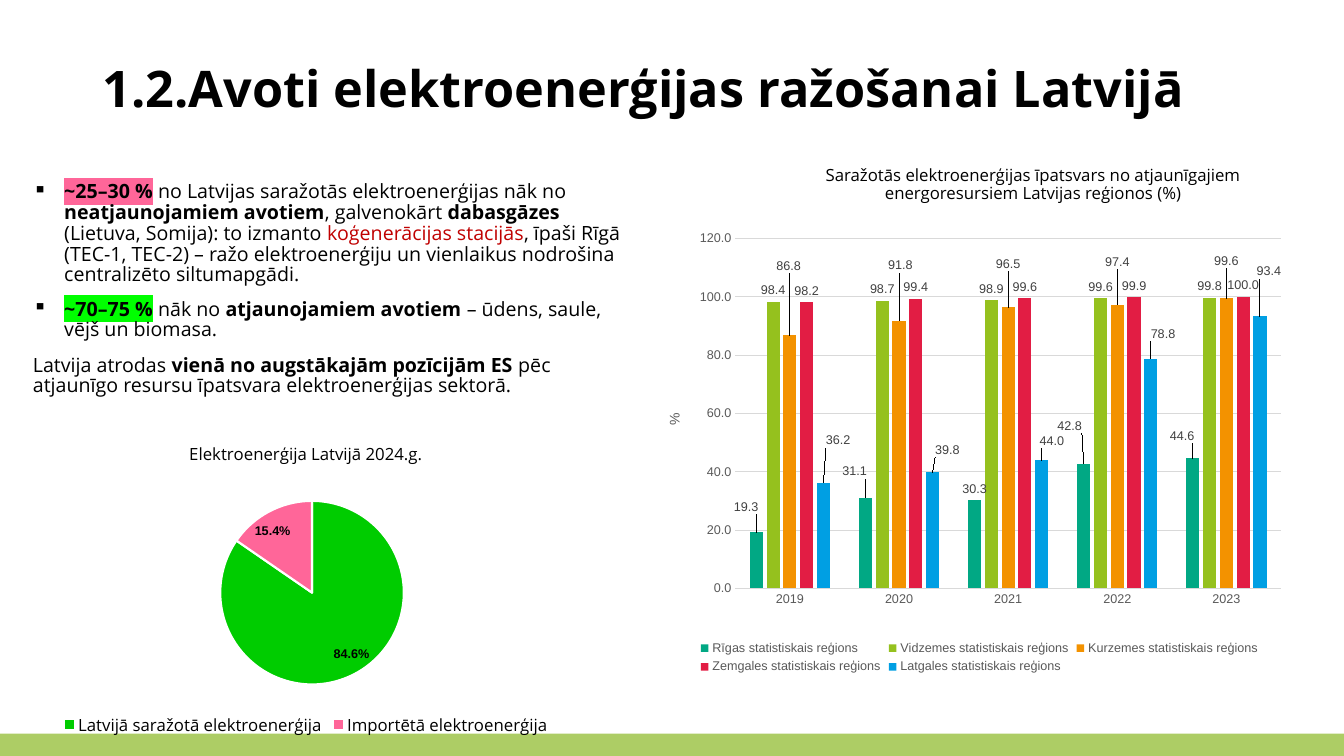
from lxml import etree
from pptx import Presentation
from pptx.chart.data import CategoryChartData
from pptx.dml.color import RGBColor
from pptx.enum.chart import XL_CHART_TYPE, XL_LABEL_POSITION, XL_LEGEND_POSITION, XL_TICK_MARK
from pptx.enum.shapes import MSO_SHAPE
from pptx.enum.text import MSO_ANCHOR, PP_ALIGN
from pptx.oxml.ns import qn
from pptx.util import Cm, Pt

PIE, COLUMNS = XL_CHART_TYPE.PIE, XL_CHART_TYPE.COLUMN_CLUSTERED
BEST_FIT, OUTSIDE_END = XL_LABEL_POSITION.BEST_FIT, XL_LABEL_POSITION.OUTSIDE_END
LEGEND_BOTTOM, NO_TICKS = XL_LEGEND_POSITION.BOTTOM, XL_TICK_MARK.NONE
LEFT, CENTER = PP_ALIGN.LEFT, PP_ALIGN.CENTER
TOP, MIDDLE = MSO_ANCHOR.TOP, MSO_ANCHOR.MIDDLE

THEME = {
    "font": "Open Sans", "chart_font": "Arial",
    "title": 36, "body": 14, "caption": 12, "chart": 10, "label": 9,
    "black": "000000", "white": "FFFFFF", "red": "C00000", "pink": "FF6699",
    "lime": "00FF00", "green": "00CC00", "band": "ADCD65",
    "axis": "595959", "value": "404040", "grid": "D9D9D9",
}

# Left, top, width, height in centimetres
BAND = (0, 18.49, 33.87, 0.56)
TITLE = (2.34, 0.46, 29.21, 3.68)
BODY = (0.58, 4.11, 15.42, 6.38)
BALANCE = (0, 10.74, 15.42, 7.92)
REGIONS = (16.59, 5.79, 16.18, 11.3)
CAPTION = (20.45, 4.09, 11.18, 1.7)

HEADING = "1.2.Avoti elektroenerģijas ražošanai Latvijā"
REGIONS_CAPTION = ("Saražotās elektroenerģijas īpatsvars no atjaunīgajiem "
                   "energoresursiem Latvijas reģionos (%)")

# (bulleted, space before in points, [(words, style), ...])
PARAGRAPHS = [
    (True, 0, [
        ("~25–30 %", {"bold": True, "highlight": "pink"}),
        (" no Latvijas saražotās elektroenerģijas nāk no ", {}),
        ("neatjaunojamiem avotiem", {"bold": True}),
        (", galvenokārt ", {}),
        ("dabasgāzes ", {"bold": True}),
        ("(Lietuva, Somija): to izmanto ", {}),
        ("koģenerācijas stacijās", {"color": "red"}),
        (", īpaši Rīgā (TEC-1, TEC-2) – ražo elektroenerģiju un vienlaikus "
         "nodrošina centralizēto siltumapgādi.", {}),
    ]),
    (True, 9.6, [
        ("~70–75 %", {"bold": True, "highlight": "lime"}),
        (" nāk no ", {}),
        ("atjaunojamiem avotiem ", {"bold": True}),
        ("– ūdens, saule, vējš un biomasa.", {}),
    ]),
    (False, 10.4, [
        ("Latvija atrodas ", {}),
        ("vienā no augstākajām pozīcijām ES", {"bold": True}),
        (" pēc atjaunīgo resursu īpatsvara elektroenerģijas sektorā.", {}),
    ]),
]

BALANCE_TITLE = "Elektroenerģija Latvijā 2024.g."
BALANCE_SHARES = [
    ("Latvijā saražotā elektroenerģija", 0.846, "green"),
    ("Importētā elektroenerģija", 0.154, "pink"),
]
BALANCE_PLOT = (0.36, 0.23, 0.3, 0.6)

YEARS = ["2019", "2020", "2021", "2022", "2023"]
# (region, colour, values, label shifts in percent of the chart's width and height)
REGION_SHARES = [
    ("Rīgas statistiskais reģions", "01A884", [19.3, 31.1, 30.3, 42.8, 44.6],
     [(-1.6, -3.1), (-1.7, -3.3), None, (-2.2, -5.8), (-1.7, -2.5)]),
    ("Vidzemes statistiskais reģions", "95C11E", [98.4, 98.7, 98.9, 99.6, 99.8], []),
    ("Kurzemes statistiskais reģions", "F39200", [86.8, 91.8, 96.5, 97.4, 99.6],
     [(-0.2, -12.9), (0.2, -9.8), (0, -7.1), (0, -6.9), (0, -5.8)]),
    ("Zemgales statistiskais reģions", "E21D44", [98.2, 99.4, 99.6, 99.9, 100], []),
    ("Latgales statistiskais reģions", "009FE3", [36.2, 39.8, 44, 78.8, 93.4],
     [(2.3, -6.9), (2.3, -2.5), (1.6, -1.8), (1.9, -2.9), (1.4, -7.4)]),
]
REGIONS_PLOT = (0.12, 0.02, 0.85, 0.78)


def rgb(name):
    return RGBColor.from_string(THEME.get(name, name))


def style_font(font, size, color="black", face="font", bold=False):
    font.size, font.bold, font.name = Pt(THEME[size]), bold, THEME[face]
    font.color.rgb = rgb(color)


def place(box):
    return [Cm(length) for length in box]


def add_text(slide, box, size, paragraphs, align=LEFT, anchor=TOP, spacing=0.9):
    frame = slide.shapes.add_textbox(*place(box)).text_frame
    frame.word_wrap, frame.vertical_anchor = True, anchor
    for index, (bulleted, space, pieces) in enumerate(paragraphs):
        paragraph = frame.add_paragraph() if index else frame.paragraphs[0]
        paragraph.alignment, paragraph.line_spacing = align, spacing
        if space:
            paragraph.space_before = Pt(space)
        if bulleted:
            props = paragraph._p.get_or_add_pPr()
            props.set("marL", str(Cm(0.79)))
            props.set("indent", str(-Cm(0.79)))
            etree.SubElement(props, qn("a:buChar"), char="▪")
        for words, style in pieces:
            run = paragraph.add_run()
            run.text = words
            style_font(run.font, size, style.get("color", "black"), bold=style.get("bold", False))
            if "highlight" in style:
                mark = etree.Element(qn("a:highlight"))
                etree.SubElement(mark, qn("a:srgbClr"), val=THEME[style["highlight"]])
                run._r.rPr.find(qn("a:solidFill")).addnext(mark)


def manual_layout(**settings):
    layout = etree.Element(qn("c:layout"))
    manual = etree.SubElement(layout, qn("c:manualLayout"))
    for tag, value in settings.items():
        etree.SubElement(manual, qn(f"c:{tag}"), val=str(value))
    return layout


def add_chart(slide, kind, box, data, plot_box):
    chart = slide.shapes.add_chart(kind, *place(box), data).chart
    style_font(chart.font, "chart", face="chart_font")
    chart.has_legend = True
    chart.legend.position, chart.legend.include_in_layout = LEGEND_BOTTOM, False
    area = chart._chartSpace.chart.plotArea
    for automatic in area.findall(qn("c:layout")):
        area.remove(automatic)
    x, y, w, h = plot_box
    area.insert(0, manual_layout(layoutTarget="inner", xMode="edge", yMode="edge",
                                 x=x, y=y, w=w, h=h))
    chart.plots[0].vary_by_categories = kind == PIE
    return chart


def show_values(series, number_format, position, color, bold=False):
    labels = series.data_labels
    style_font(labels.font, "label", color, "chart_font", bold)
    labels.number_format, labels.number_format_is_linked = number_format, False
    labels.position, labels.show_value = position, True


def set_title(titled, words, size, color, face):
    titled.has_title = True
    frame = (titled.chart_title if hasattr(titled, "chart_title") else titled.axis_title).text_frame
    frame.text = words
    style_font(frame.paragraphs[0].runs[0].font, size, color, face)


def add_balance_chart(slide):
    data = CategoryChartData(number_format="0.0%")
    data.categories = [name for name, _, _ in BALANCE_SHARES]
    data.add_series("Series 1", [share for _, share, _ in BALANCE_SHARES])
    chart = add_chart(slide, PIE, BALANCE, data, BALANCE_PLOT)
    set_title(chart, BALANCE_TITLE, "caption", "black", "font")
    style_font(chart.legend.font, "caption")
    series = chart.plots[0].series[0]
    show_values(series, "0.0%", BEST_FIT, "black", bold=True)
    for index, (_, _, color) in enumerate(BALANCE_SHARES):
        slice_format = series.points[index].format
        slice_format.fill.solid()
        slice_format.fill.fore_color.rgb = rgb(color)
        slice_format.line.color.rgb = rgb("white")
        slice_format.line.width = Pt(1.5)


def add_regions_chart(slide):
    data = CategoryChartData(number_format="0.0")
    data.categories = YEARS
    for region, _, shares, _ in REGION_SHARES:
        data.add_series(region, shares)
    chart = add_chart(slide, COLUMNS, REGIONS, data, REGIONS_PLOT)
    chart.has_title = False
    style_font(chart.legend.font, "label", "axis", "chart_font")
    plot = chart.plots[0]
    plot.gap_width, plot.overlap = 219, -27
    years, percent = chart.category_axis, chart.value_axis
    for axis in (years, percent):
        axis.major_tick_mark = axis.minor_tick_mark = NO_TICKS
        style_font(axis.tick_labels.font, "label", "axis", "chart_font")
    percent.minimum_scale, percent.maximum_scale, percent.major_unit = 0, 120, 20
    percent.tick_labels.number_format = "0.0"
    percent.tick_labels.number_format_is_linked = False
    percent.format.line.fill.background()
    for line in (years.format.line, percent.major_gridlines.format.line):
        line.color.rgb, line.width = rgb("grid"), Pt(0.75)
    set_title(percent, "%", "chart", "axis", "chart_font")
    for series, (_, color, _, shifts) in zip(plot.series, REGION_SHARES):
        series.format.fill.solid()
        series.format.fill.fore_color.rgb = rgb(color)
        show_values(series, "0.0", OUTSIDE_END, "value")
        for index, shift in enumerate(shifts):
            if shift:
                label = series.points[index].data_label
                style_font(label.font, "label", "value", "chart_font")
                label.position = OUTSIDE_END
                x, y = (round(part / 100, 3) for part in shift)
                marker = series._element.xpath(f"c:dLbls/c:dLbl/c:idx[@val='{index}']")[0]
                marker.addnext(manual_layout(x=x, y=y))


def main():
    deck = Presentation()
    deck.slide_width, deck.slide_height = Cm(33.87), Cm(19.05)
    slide = deck.slides.add_slide(deck.slide_layouts[6])
    band = slide.shapes.add_shape(MSO_SHAPE.RECTANGLE, *place(BAND))
    band.shadow.inherit = False
    band.fill.solid()
    band.fill.fore_color.rgb = rgb("band")
    band.line.fill.background()
    add_text(slide, TITLE, "title", [(False, 0, [(HEADING, {"bold": True})])], anchor=MIDDLE)
    add_text(slide, BODY, "body", PARAGRAPHS, anchor=MIDDLE, spacing=0.88)
    add_balance_chart(slide)
    add_regions_chart(slide)
    add_text(slide, CAPTION, "caption", [(False, 0, [(REGIONS_CAPTION, {})])], align=CENTER)
    deck.save("out.pptx")


if __name__ == "__main__":
    main()
